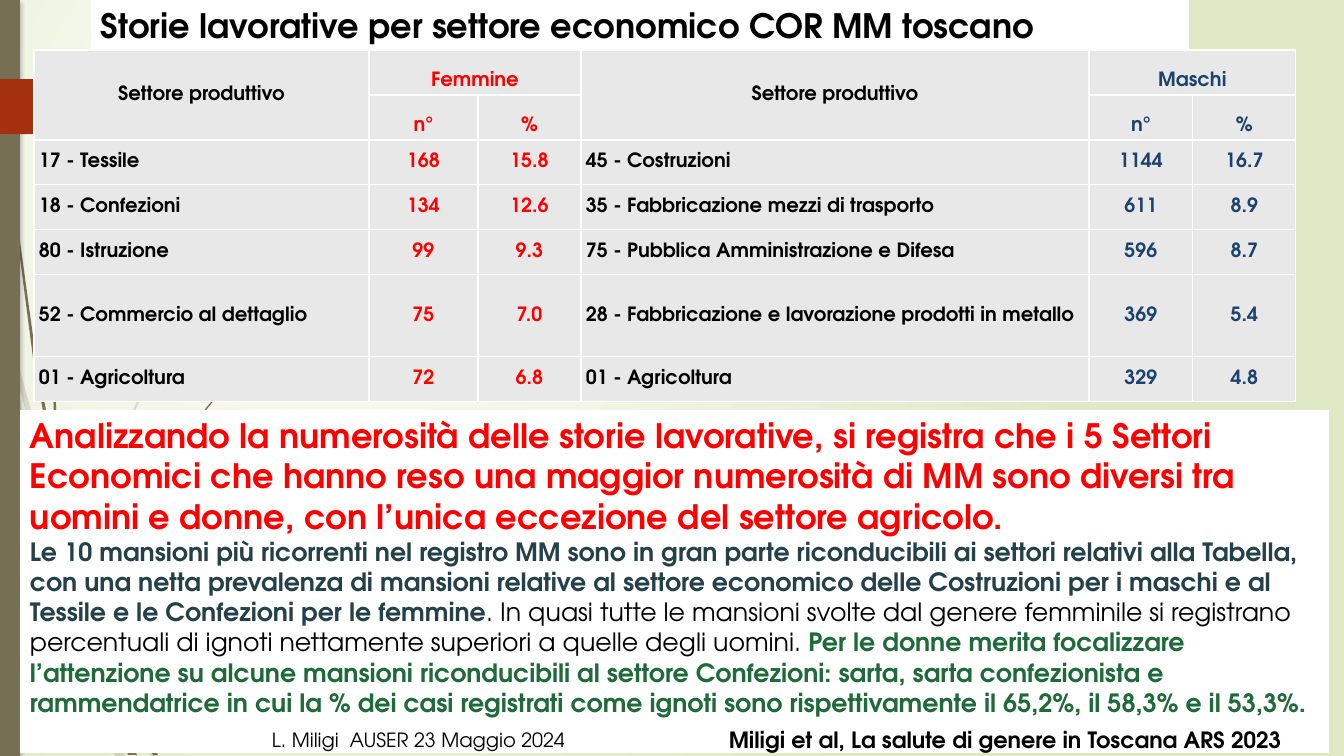
from lxml import etree
from pptx import Presentation, util as u
from pptx.dml.color import RGBColor
from pptx.enum import shapes, text
from pptx.oxml import ns

PX = 914400 / 100.8
FONT = "TeX Gyre Adventor"
BLACK = RGBColor(0x00, 0x00, 0x00)
WHITE = RGBColor(0xFF, 0xFF, 0xFF)
RED = RGBColor(0xFF, 0x00, 0x00)
NAVY = RGBColor(0x1C, 0x43, 0x6D)
SLATE = RGBColor(0x24, 0x41, 0x49)
GREEN = RGBColor(0x1E, 0x6A, 0x39)
GREY = RGBColor(0xE8, 0xE8, 0xE8)
OLIVE = RGBColor(0x76, 0x6F, 0x54)
RUST = RGBColor(0xA5, 0x30, 0x10)
LIME = RGBColor(0xDF, 0xE7, 0xC4)

# Outlines of the stems at the left edge
FAINT = [
    [(0, 284), (8, 325), (11, 353), (10, 347), (0, 301)],
    [(57, 526), (85, 604), (86, 591), (62, 524), (14, 348), (17, 379)],
    [(93, 612), (89, 601), (89, 615), (124, 700), (151, 756), (156, 756), (128, 697)],
    [(120, 756), (125, 756), (106, 717)],
    [(94, 688), (71, 624), (31, 473), (17, 379), (11, 353), (28, 474), (66, 626),
     (93, 699), (102, 720), (100, 713)],
    [(89, 589), (111, 466), (161, 352), (231, 247), (270, 200), (292, 176), (314, 154),
     (291, 176), (270, 199), (230, 246), (159, 351), (109, 465), (86, 589), (86, 591),
     (89, 601)],
    [(102, 720), (115, 756), (120, 756)],
    [(97, 698), (94, 688), (100, 713), (102, 720), (120, 756), (106, 717)],
]
DARK = [
    [(7, 111), (17, 235), (33, 358), (56, 480), (57, 485), (55, 461), (55, 457),
     (36, 358), (19, 234), (8, 110), (5, 48), (4, 0), (3, 0), (4, 48)],
    [(114, 654), (111, 646), (112, 661), (133, 714), (153, 755), (158, 755), (137, 711)],
    [(60, 476), (58, 457), (54, 352), (58, 247), (64, 195), (71, 142), (62, 195),
     (56, 247), (52, 352), (55, 453), (60, 475)],
    [(134, 755), (137, 755), (123, 725)],
    [(112, 638), (126, 556), (159, 480), (207, 409), (233, 377), (247, 362), (263, 347),
     (247, 361), (233, 376), (206, 408), (157, 478), (123, 555), (107, 636), (111, 646)],
    [(118, 728), (128, 755), (132, 755)],
    [(117, 712), (111, 697), (117, 723), (118, 728), (131, 755), (134, 755), (123, 725)],
]
ARROW = [(0, 0), (147, 0), (149, 1), (174, 26), (175, 27), (174, 29), (149, 54),
         (147, 56), (137, 56), (0, 55)]

HEAD = [["Settore produttivo", "Femmine", "", "Settore produttivo", "Maschi", ""],
        ["", "n°", "%", "", "n°", "%"]]
ROWS = [
    ["17 - Tessile", "168", "15.8", "45 - Costruzioni", "1144", "16.7"],
    ["18 - Confezioni", "134", "12.6", "35 - Fabbricazione mezzi di trasporto", "611", "8.9"],
    ["80 - Istruzione", "99", "9.3", "75 - Pubblica Amministrazione e Difesa", "596", "8.7"],
    ["52 - Commercio al dettaglio", "75", "7.0",
     "28 - Fabbricazione e lavorazione prodotti in metallo", "369", "5.4"],
    ["01 - Agricoltura", "72", "6.8", "01 - Agricoltura", "329", "4.8"],
]
WIDTHS = [335, 109, 103, 508, 104, 103]
HEIGHTS = [45, 45, 45, 45, 45, 82, 45]
INKS = [BLACK, RED, RED, BLACK, NAVY, NAVY]

# Each paragraph is a list of runs: words, size, colour, bold
NOTES = [
    [("Analizzando la numerosità delle storie lavorative, si registra che i 5 Settori "
      "Economici che hanno reso una maggior numerosità di MM sono diversi tra uomini e "
      "donne, con l’unica eccezione del settore agricolo.", 24, RED, True)],
    [("Le 10 mansioni più ricorrenti nel registro MM sono in gran parte riconducibili ai "
      "settori relativi alla Tabella, con una netta prevalenza di mansioni relative al "
      "settore economico delle Costruzioni per i maschi e al Tessile e le Confezioni per "
      "le femmine", 18, SLATE, True),
     (". In quasi tutte le mansioni svolte dal genere femminile si registrano percentuali "
      "di ignoti nettamente superiori a quelle degli uomini. ", 18, BLACK, False),
     ("Per le donne merita focalizzare l’attenzione su alcune mansioni riconducibili al "
      "settore Confezioni: sarta, sarta confezionista e rammendatrice in cui la % dei casi "
      "registrati come ignoti sono rispettivamente il 65,2%, il 58,3% e il 53,3%.",
      18, GREEN, True)],
]


def px(*nums):
    return [u.Emu(round(n * PX)) for n in nums]


def add_xml(parent, tag, **attrs):
    return etree.SubElement(parent, ns.qn(tag), attrs)


def style(run, size, ink, bold):
    font = run.font
    font.name, font.size, font.bold = FONT, u.Pt(size), bold
    font.color.rgb = ink


def paint(shape, ink):
    shape.fill.solid()
    shape.fill.fore_color.rgb = ink
    shape.line.fill.background()
    shape.shadow.inherit = False


def outline(slide, pts, ink, left=0, top=0):
    pts = [(left + x, top + y) for x, y in pts]
    pen = slide.shapes.build_freeform(*pts[0], scale=PX)
    pen.add_line_segments(pts[1:], close=True)
    shape = pen.convert_to_shape()
    paint(shape, ink)
    return shape


def backdrop(slide):
    fill = slide.background.fill
    fill.gradient()
    for stop, ink, place in zip(fill.gradient_stops, (WHITE, LIME), (0, 1)):
        stop.color.rgb = ink
        stop.position = place
    # Radial gradient centred a quarter of the way in
    lin = next(slide.background._cSld.iter(ns.qn("a:lin")))
    path = etree.Element(ns.qn("a:path"), path="circle")
    add_xml(path, "a:fillToRect", l="25000", t="25000", r="75000", b="75000")
    lin.getparent().replace(lin, path)


def edge(slide, left, top, width, height):
    for pts in FAINT:
        stem = outline(slide, pts, OLIVE, left, top)
        tint = next(stem._element.spPr.iter(ns.qn("a:srgbClr")))
        add_xml(tint, "a:alpha", val="20000")
    for pts in DARK:
        outline(slide, pts, OLIVE, left, top)
    bar = slide.shapes.add_shape(shapes.MSO_SHAPE.RECTANGLE, *px(left, top, width, height))
    paint(bar, OLIVE)
    glow = bar._element.spPr.find(ns.qn("a:effectLst"))
    cast = add_xml(glow, "a:outerShdw", blurRad="38100", dist="25400", dir="5400000")
    add_xml(add_xml(cast, "a:srgbClr", val="000000"), "a:alpha", val="25000")
    outline(slide, ARROW, RUST, left, top + 79)


def label(slide, box, paras, ground=None):
    shape = slide.shapes.add_textbox(*px(*box))
    if ground is not None:
        shape.fill.solid()
        shape.fill.fore_color.rgb = ground
    frame = shape.text_frame
    frame.word_wrap = True
    for i, runs in enumerate(paras):
        para = frame.add_paragraph() if i else frame.paragraphs[0]
        for words, *look in runs:
            run = para.add_run()
            run.text = words
            style(run, *look)


def fill_cell(cell, words, ink, align, anchor):
    cell.margin_left, cell.margin_right, cell.margin_top, cell.margin_bottom = px(5, 5, 5, 5)
    cell.vertical_anchor = anchor
    props = cell._tc.get_or_add_tcPr()
    for side in ("L", "R", "T", "B"):
        line = add_xml(props, "a:ln" + side, w="12192")
        add_xml(add_xml(line, "a:solidFill"), "a:srgbClr", val=str(WHITE))
    cell.fill.solid()
    cell.fill.fore_color.rgb = GREY
    cell.text_frame.text = words
    para = cell.text_frame.paragraphs[0]
    para.alignment = align
    for run in para.runs:
        style(run, 14, ink, True)


def sectors(slide, left, top):
    data = HEAD + ROWS
    box = px(left, top, sum(WIDTHS), sum(HEIGHTS))
    table = slide.shapes.add_table(len(data), len(WIDTHS), *box).table
    table.first_row = table.horz_banding = False
    for col, width in zip(table.columns, px(*WIDTHS)):
        col.width = width
    for row, height in zip(table.rows, px(*HEIGHTS)):
        row.height = height
    for r, line in enumerate(data):
        for c, words in enumerate(line):
            name, head = c % 3 == 0, r < len(HEAD)
            align = text.PP_ALIGN.LEFT if name and not head else text.PP_ALIGN.CENTER
            anchor = text.MSO_ANCHOR.BOTTOM if head and not name else text.MSO_ANCHOR.MIDDLE
            fill_cell(table.cell(r, c), words, INKS[c], align, anchor)
    # Header spans for each half of the table
    for c in (0, 3):
        table.cell(0, c).merge(table.cell(1, c))
        table.cell(0, c + 1).merge(table.cell(0, c + 2))


def main():
    deck = Presentation()
    deck.slide_width, deck.slide_height = px(1344, 756)
    slide = deck.slides.add_slide(deck.slide_layouts[6])
    backdrop(slide)
    edge(slide, 0, 0, 20, 756)
    title = "Storie lavorative per settore economico COR MM toscano"
    label(slide, (91, 0, 1098, 50), [[(title, 24, BLACK, True)]], WHITE)
    sectors(slide, 34, 50)
    label(slide, (20, 410, 1309, 343), NOTES, WHITE)
    # Source and event lines
    cite = "Miligi et al, La salute di genere in Toscana ARS 2023"
    label(slide, (719, 721, 593, 36), [[(cite, 16, BLACK, True)]])
    event = "L. Miligi  AUSER 23 Maggio 2024"
    label(slide, (262, 723, 412, 33), [[(event, 14, BLACK, False)]])
    deck.save("out.pptx")


if __name__ == "__main__":
    main()
